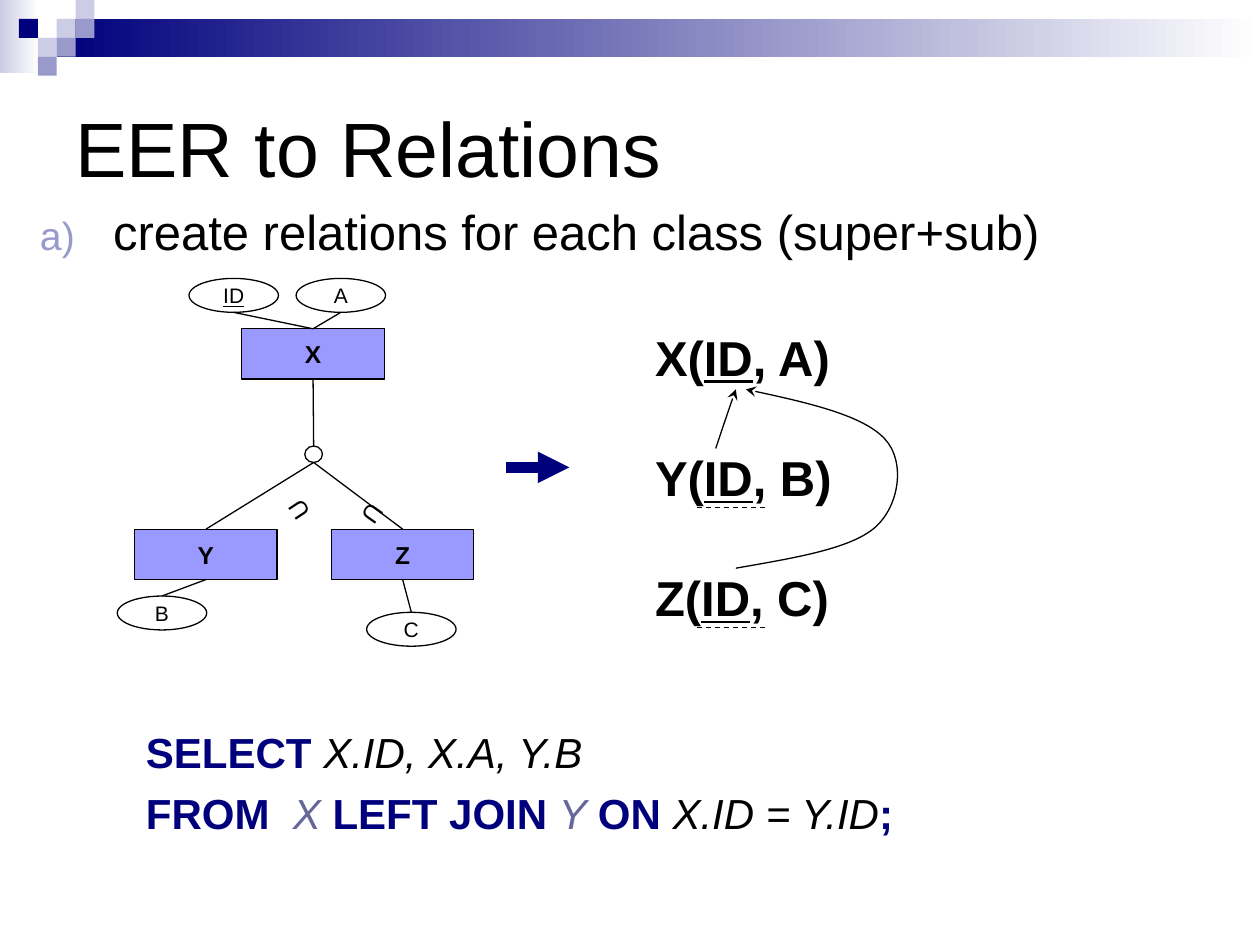
from lxml import etree
from pptx import Presentation
from pptx import util as u
from pptx.dml.color import RGBColor
from pptx.enum import dml, shapes, text
from pptx.oxml.ns import qn

Pt = u.Pt
THEME = dict(font="Arial", title=44, body=28, sql=24, entity=14, attr=12,
             black="000000", white="FFFFFF", navy="00007D", slate="666699",
             mid="9999CC", pale="CCCCE6", entity_fill="9999FF", hair=0.75)

# Content: runs are (text, style letters b/i/u, colour name)
TITLE = [[("EER to Relations", "", "black")]]
STEP = [[("create relations for each class (super+sub)", "", "black")]]
RELATIONS = [[(f"{name}(", "b", "black"), ("ID", "bu", "black"), (f", {col})", "b", "black")]
             for name, col in ("XA", "YB", "ZC")]
SQL = [
    [("SELECT ", "b", "navy"), ("X.ID, X.A, Y.B", "i", "black")],
    [("FROM ", "b", "navy"), (" X ", "i", "slate"), ("LEFT JOIN ", "b", "navy"),
     ("Y ", "i", "slate"), ("ON ", "b", "navy"), ("X.ID = Y.ID", "i", "black"),
     (";", "b", "navy")],
]
ENTITY_SIZE, ATTR_SIZE = (81.4, 28.8), (51.1, 19.4)
ENTITIES = {"X": (138.2, 187.9), "Z": (189.4, 302.4), "Y": (77, 302.4)}
ATTRS = {"ID": (108, 159.1), "A": (169.2, 159.1), "B": (67, 340.6), "C": (209.5, 349.9)}
NODE = (174.2, 254.9, 10.1, 9.4)
LINKS = [("X", "node"), ("node", "Y"), ("node", "Z"), ("ID", "X"), ("A", "X"),
         ("Y", "B"), ("Z", "C")]  # upper part, lower part
SUBSETS = [(158, 279.7, 236.6), (201, 282, 125.2)]
DASHES = [(398.2, 290.2), (398.2, 358.6)]
DASH_LENGTH = 39.6
KEY_ARROWS = [  # start, then three points per curve
    [(409, 256.3), (409, 256.3), (414.7, 239), (420.5, 222.5)],
    [(420.5, 324.7), (452.9, 319), (485.3, 313.9), (499.7, 301.7),
     (514.1, 289.4), (517.7, 263.5), (505.4, 250.6),
     (493.2, 237.6), (460.1, 229.7), (426.2, 222.5)],
]
GRID = 10.8
BANDS = [((0, 0, 22.3, 41.8), "pale"), ((32.4, GRID, 687.6, 21.6), "navy")]
SQUARES = [(3, 1, "pale"), (4, 0, "pale"), (4, 1, "mid"), (2, 2, "pale"),
           (1, 1, "navy"), (3, 2, "mid"), (2, 3, "mid")]  # column, row, colour

prs = Presentation()
prs.slide_width, prs.slide_height = Pt(720), Pt(540)
s = prs.slides.add_slide(prs.slide_layouts[6])


def rgb(name):
    return RGBColor.from_string(THEME[name])


def write(tf, paragraphs, size, before=0):
    for i, runs in enumerate(paragraphs):
        p = tf.paragraphs[0] if i == 0 else tf.add_paragraph()
        p.space_before = Pt(before)
        for words, style, colour in runs:
            r = p.add_run()
            r.text = words
            f = r.font
            f.name, f.size, f.color.rgb = THEME["font"], Pt(size), rgb(colour)
            f.bold, f.italic, f.underline = "b" in style, "i" in style, "u" in style


def text_box(box, paragraphs, size, before=0, wrap=True):
    sp = s.shapes.add_textbox(*map(Pt, box))
    sp.text_frame.word_wrap = wrap
    write(sp.text_frame, paragraphs, size, before)
    return sp


def shape(kind, box, fill, outlined=False):
    sp = s.shapes.add_shape(kind, *map(Pt, box))
    sp.shadow.inherit = False
    sp.fill.solid()
    sp.fill.fore_color.rgb = rgb(fill)
    if outlined:
        sp.line.color.rgb, sp.line.width = rgb("black"), Pt(THEME["hair"])
    else:
        sp.line.fill.background()
    return sp


def label(sp, words, style, size):
    tf = sp.text_frame
    tf.word_wrap, tf.vertical_anchor = False, text.MSO_ANCHOR.MIDDLE
    write(tf, [[(words, style, "black")]], size)
    tf.paragraphs[0].alignment = text.PP_ALIGN.CENTER


def line(start, end, colour="black", width=THEME["hair"]):
    c = s.shapes.add_connector(shapes.MSO_CONNECTOR.STRAIGHT, *map(int, (*start, *end)))
    c.line.color.rgb, c.line.width = rgb(colour), Pt(width)
    etree.SubElement(c._element.spPr, qn("a:effectLst"))
    return c


def arrowhead(sp, kind):
    etree.SubElement(sp.line._get_or_add_ln(), qn("a:tailEnd"), type=kind)


def curve(points):
    pts = [(Pt(x), Pt(y)) for x, y in points]
    builder = s.shapes.build_freeform(*pts[0])
    builder.add_line_segments(pts[1:], close=False)
    sp = builder.convert_to_shape()
    sp.shadow.inherit = False
    sp.fill.background()
    sp.line.color.rgb, sp.line.width = rgb("black"), Pt(THEME["hair"])
    # Every three straight segments become one Bezier curve
    outline = next(sp._element.iter(qn("a:path")))
    segments = outline.findall(qn("a:lnTo"))
    for i in range(0, len(segments), 3):
        bezier = etree.SubElement(outline, qn("a:cubicBezTo"))
        for segment in segments[i:i + 3]:
            bezier.append(segment[0])
            outline.remove(segment)
    return sp


# Header decoration
RECT, OVAL = shapes.MSO_SHAPE.RECTANGLE, shapes.MSO_SHAPE.OVAL
for box, colour in BANDS:
    sp = shape(RECT, box, colour)
    sp.fill.gradient()
    sp.fill.gradient_angle = 0
    for stop, name in zip(sp.fill.gradient_stops, (colour, "white")):
        stop.color.rgb = rgb(name)
for col, row, colour in SQUARES:
    shape(RECT, (col * GRID, row * GRID, GRID, GRID), colour)

# Title and lettered step
sp = text_box((36, 36, 648, 96), TITLE, THEME["title"])
sp.text_frame.vertical_anchor = text.MSO_ANCHOR.MIDDLE
sp = text_box((-20.2, 111.6, 648, 72), STEP, THEME["body"], before=5.6)
pPr = sp.text_frame.paragraphs[0]._p.get_or_add_pPr()
pPr.set("marL", str(Pt(77.8)))
pPr.set("indent", str(Pt(-41.8)))
etree.SubElement(etree.SubElement(pPr, qn("a:buClr")), qn("a:srgbClr"), val=THEME["mid"])
etree.SubElement(pPr, qn("a:buSzPct"), val="80000")
etree.SubElement(pPr, qn("a:buAutoNum"), type="alphaLcParenR")

# Block arrow and relations
arrowhead(line((Pt(289.4), Pt(267.1)), (Pt(325.4), Pt(267.1)), "navy", 6), "triangle")
text_box((367.2, 183.6, 185.8, 175.7), RELATIONS, THEME["body"], before=35)

# EER diagram
parts = {}
for name, pos in ENTITIES.items():
    parts[name] = shape(RECT, pos + ENTITY_SIZE, "entity_fill", True)
    label(parts[name], name, "b", THEME["entity"])
parts["node"] = shape(OVAL, NODE, "white", True)
for name, pos in ATTRS.items():
    parts[name] = shape(OVAL, pos + ATTR_SIZE, "white", True)
    label(parts[name], name, "u" if name == "ID" else "", THEME["attr"])
for upper, lower in LINKS:
    a, b = parts[upper], parts[lower]
    c = line((a.left + a.width / 2, a.top + a.height), (b.left + b.width / 2, b.top))
    if upper in ENTITIES:
        c.begin_connect(a, 2)
    if lower in ENTITIES:
        c.end_connect(b, 0)
for x, y, angle in SUBSETS:
    sp = text_box((x, y, 24.5, 23.8), [[("U", "", "black")]], THEME["entity"], wrap=False)
    sp.rotation = angle

# Foreign keys
for x, y in DASHES:
    c = line((Pt(x), Pt(y)), (Pt(x + DASH_LENGTH), Pt(y)))
    c.line.dash_style = dml.MSO_LINE.DASH
for points in KEY_ARROWS:
    arrowhead(curve(points), "stealth")

# Query
text_box((76.3, 411.8, 481.7, 92.2), SQL, THEME["sql"], before=6)

prs.save("out.pptx")
